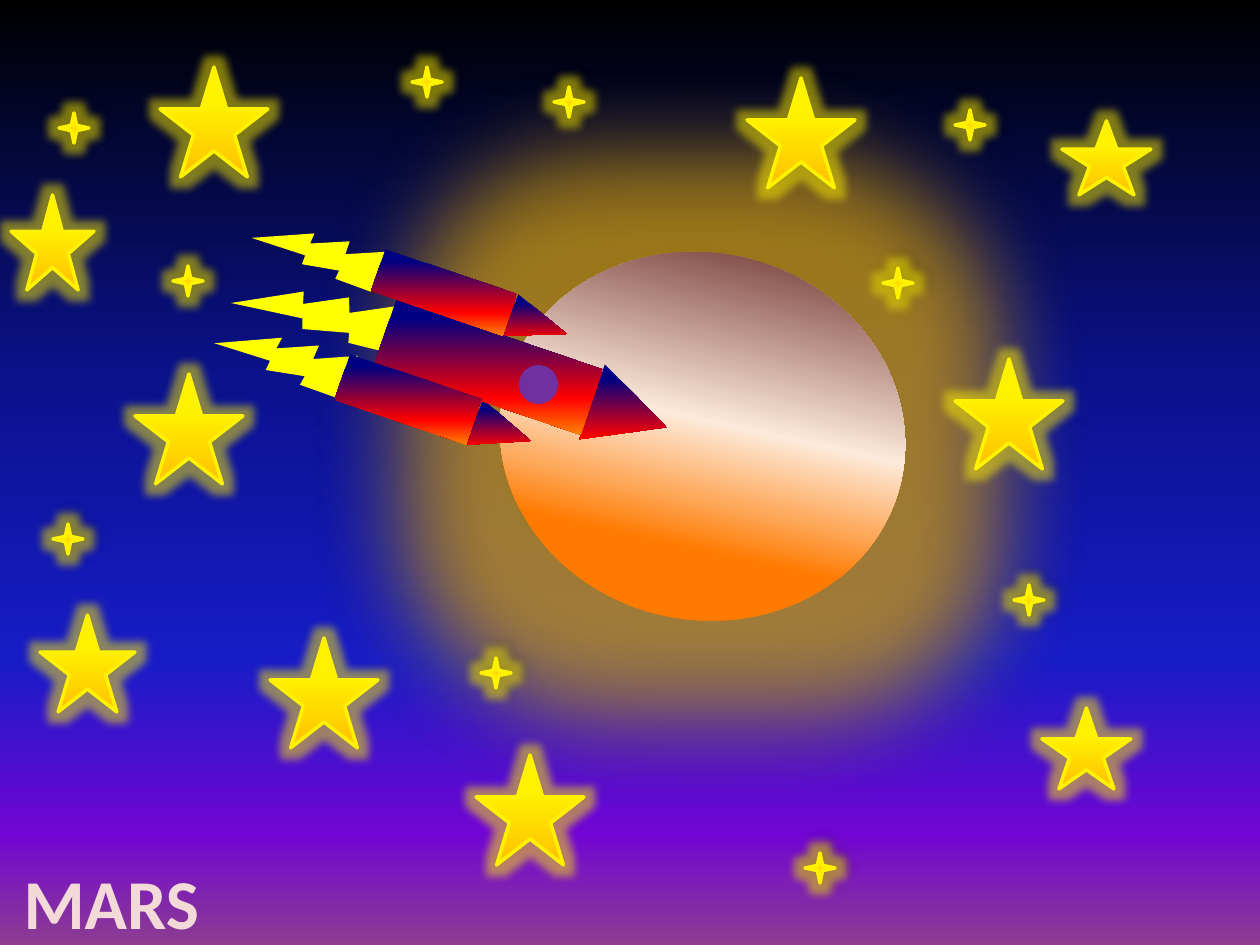
import pptx
import pptx.util
import pptx.oxml
import pptx.oxml.ns
from pptx.dml.color import RGBColor
from pptx.enum.shapes import MSO_SHAPE
from pptx.enum.text import MSO_ANCHOR, MSO_AUTO_SIZE, PP_ALIGN

PX = 914400 / 126  # EMU in one px
NS = pptx.oxml.ns.nsdecls("a")
qn = pptx.oxml.ns.qn

BLACK = RGBColor(0x00, 0x00, 0x00)
YELLOW = RGBColor(0xFF, 0xFF, 0x00)
LEMON = RGBColor(0xFF, 0xF2, 0x00)
AMBER = RGBColor(0xFF, 0xC0, 0x00)
PURPLE = RGBColor(0x70, 0x30, 0xA0)
RED = RGBColor(0xD0, 0x2F, 0x2A)

# Gradients: (position in percent, colour)
SKY = [(0, BLACK), (40, RGBColor(0x0A, 0x12, 0x8C)), (70, RGBColor(0x18, 0x1C, 0xC7)),
       (88, RGBColor(0x70, 0x05, 0xD4)), (100, RGBColor(0x8C, 0x3D, 0x91))]
PLANET = [(29, RGBColor(0xFF, 0x7A, 0x00)), (39, RGBColor(0xFE, 0xAA, 0x5E)),
          (53, RGBColor(0xFD, 0xEA, 0xDA)), (100, RGBColor(0x4D, 0x08, 0x08))]
ROCKET = [(14, RGBColor(0x00, 0x00, 0x82)), (73, RGBColor(0xFF, 0x00, 0x00)),
          (100, RGBColor(0xFF, 0x82, 0x00))]
BIG_STAR = [(33, LEMON), (99, AMBER)]
SMALL_STAR = [(9, LEMON), (100, AMBER)]
STAR_EDGE = [(0, LEMON), (100, AMBER)]
LETTERS = [(10, RGBColor(0xFB, 0xF3, 0xF3)), (60, RGBColor(0xF3, 0xD9, 0xD8)),
           (100, RGBColor(0xE3, 0x8C, 0x8B))]

# Rocket parts: left, top, width, height, rotation
TILT = 108.8
FLAMES = [(239, 299, 107, 118, 142.9), (278, 194, 96, 118, 140.6), (276, 232, 100, 163, 127.8)]
NOSES = [(590, 375, 79, 79, TILT), (479, 402, 48, 59, TILT), (517, 295, 44, 59, TILT)]
BODIES = [(454, 258, 69, 218, TILT), (384, 330, 48, 139, TILT), (422, 223, 44, 139, TILT)]
WINDOW = (519, 365, 39, 39, TILT)

# Stars
BIG = (108, 110)
BIG_STARS = [(160, 67, *BIG), (11, 195, 83, 95), (135, 374, *BIG), (270, 638, *BIG),
             (747, 78, *BIG), (40, 615, 95, 97), (476, 755, *BIG), (1042, 708, 89, 81),
             (955, 359, *BIG), (1062, 121, 89, 74)]
SMALL = 30
SMALL_STARS = [(173, 266), (59, 113), (554, 87), (412, 67), (53, 524), (805, 853),
               (481, 658), (955, 110), (1014, 585), (883, 268)]


def px(n):
    return pptx.util.Emu(round(n * PX))


def set_format(obj, values):
    for name, value in values.items():
        setattr(obj, name, value)


def set_gradient(fill, owner, stops, angle=90, turns=True):
    """Give the fill inside the owner element a linear gradient."""
    fill.gradient()
    grad = next(owner.iter(qn("a:gradFill")))
    grad.set("rotWithShape", "1" if turns else "0")
    for child in list(grad):
        grad.remove(child)
    stop_xml = "".join(f'<a:gs pos="{pos * 1000}"><a:srgbClr val="{color}"/></a:gs>'
                       for pos, color in stops)
    grad.append(pptx.oxml.parse_xml(f"<a:gsLst {NS}>{stop_xml}</a:gsLst>"))
    grad.append(pptx.oxml.parse_xml(f'<a:lin {NS} ang="{angle * 60000}" scaled="0"/>'))


def add_effects(shape, glow, shadow_angle=None):
    """Add a glow (colour, points, opacity) and, if an angle is given, a shadow."""
    color, size, opacity = glow
    xml = (f'<a:glow rad="{size * 12700}"><a:srgbClr val="{color}">'
           f'<a:alpha val="{opacity * 1000}"/></a:srgbClr></a:glow>')
    if shadow_angle is not None:
        xml += (f'<a:outerShdw blurRad="50800" dist="38100" dir="{shadow_angle * 60000}">'
                f'<a:srgbClr val="{BLACK}"><a:alpha val="40000"/></a:srgbClr></a:outerShdw>')
    effects = shape._element.spPr.find(qn("a:effectLst"))
    for effect in list(pptx.oxml.parse_xml(f"<a:effectLst {NS}>{xml}</a:effectLst>")):
        effects.append(effect)


def add_part(shapes, kind, box, fill, angle=90, turns=True):
    """Add a preset shape without outline; fill is a colour or gradient stops."""
    *frame, rotation = box
    sp = shapes.add_shape(kind, *map(px, frame))
    sp.rotation = rotation
    sp.shadow.inherit = False
    sp.line.fill.background()
    if isinstance(fill, list):
        set_gradient(sp.fill, sp._element.spPr, fill, angle, turns)
    else:
        sp.fill.solid()
        sp.fill.fore_color.rgb = fill
    return sp


def add_star(shapes, kind, frame, fill, glow_size, shadow_angle=None):
    sp = add_part(shapes, kind, (*frame, 0), fill)
    sp.line.width = pptx.util.Pt(2)
    set_gradient(sp.line.fill, sp._element.spPr.find(qn("a:ln")), STAR_EDGE)
    add_effects(sp, (LEMON, glow_size, 50), shadow_angle)


def add_rocket(s):
    shapes = s.shapes.add_group_shape().shapes
    for box in FLAMES:
        add_part(shapes, MSO_SHAPE.LIGHTNING_BOLT, box, YELLOW)
    for kind, boxes in ((MSO_SHAPE.ISOSCELES_TRIANGLE, NOSES), (MSO_SHAPE.RECTANGLE, BODIES)):
        for box in boxes:
            add_part(shapes, kind, box, ROCKET, turns=False)
    add_part(shapes, MSO_SHAPE.OVAL, WINDOW, PURPLE)


def add_stars(s):
    shapes = s.shapes.add_group_shape().shapes
    for frame in BIG_STARS:
        add_star(shapes, MSO_SHAPE.STAR_5_POINT, frame, BIG_STAR, 10)
    for left, top in SMALL_STARS:
        add_star(shapes, MSO_SHAPE.STAR_4_POINT, (left, top, SMALL, SMALL), SMALL_STAR, 10, 315)


def set_title(s, text):
    sp = s.shapes.title
    set_format(sp, dict(left=px(11), top=px(853), width=px(381), height=px(100)))
    tf = sp.text_frame
    set_format(tf, dict(word_wrap=True, vertical_anchor=MSO_ANCHOR.TOP,
                        auto_size=MSO_AUTO_SIZE.SHAPE_TO_FIT_TEXT))
    p = tf.paragraphs[0]
    p.alignment = PP_ALIGN.LEFT
    r = p.add_run()
    r.text = text
    set_format(r.font, dict(name="Calibri", size=pptx.util.Pt(40), bold=True))
    rPr = r._r.get_or_add_rPr()
    set_gradient(r.font.fill, rPr, LETTERS)
    rPr.insert(0, pptx.oxml.parse_xml(
        f'<a:ln {NS} w="24500"><a:solidFill><a:srgbClr val="{RED}"/></a:solidFill></a:ln>'))


def main():
    prs = pptx.Presentation()
    set_format(prs, dict(slide_width=px(1260), slide_height=px(945)))
    s = prs.slides.add_slide(prs.slide_layouts[5])

    # Night sky
    set_gradient(s.background.fill, s._element, SKY)

    # Planet with its halo
    planet = add_part(s.shapes, MSO_SHAPE.OVAL, (499, 253, 407, 367, 12.4), PLANET, 270)
    add_effects(planet, (AMBER, 110, 60), 225)

    add_rocket(s)
    add_stars(s)
    set_title(s, "MARS")
    prs.save("out.pptx")


if __name__ == "__main__":
    main()
